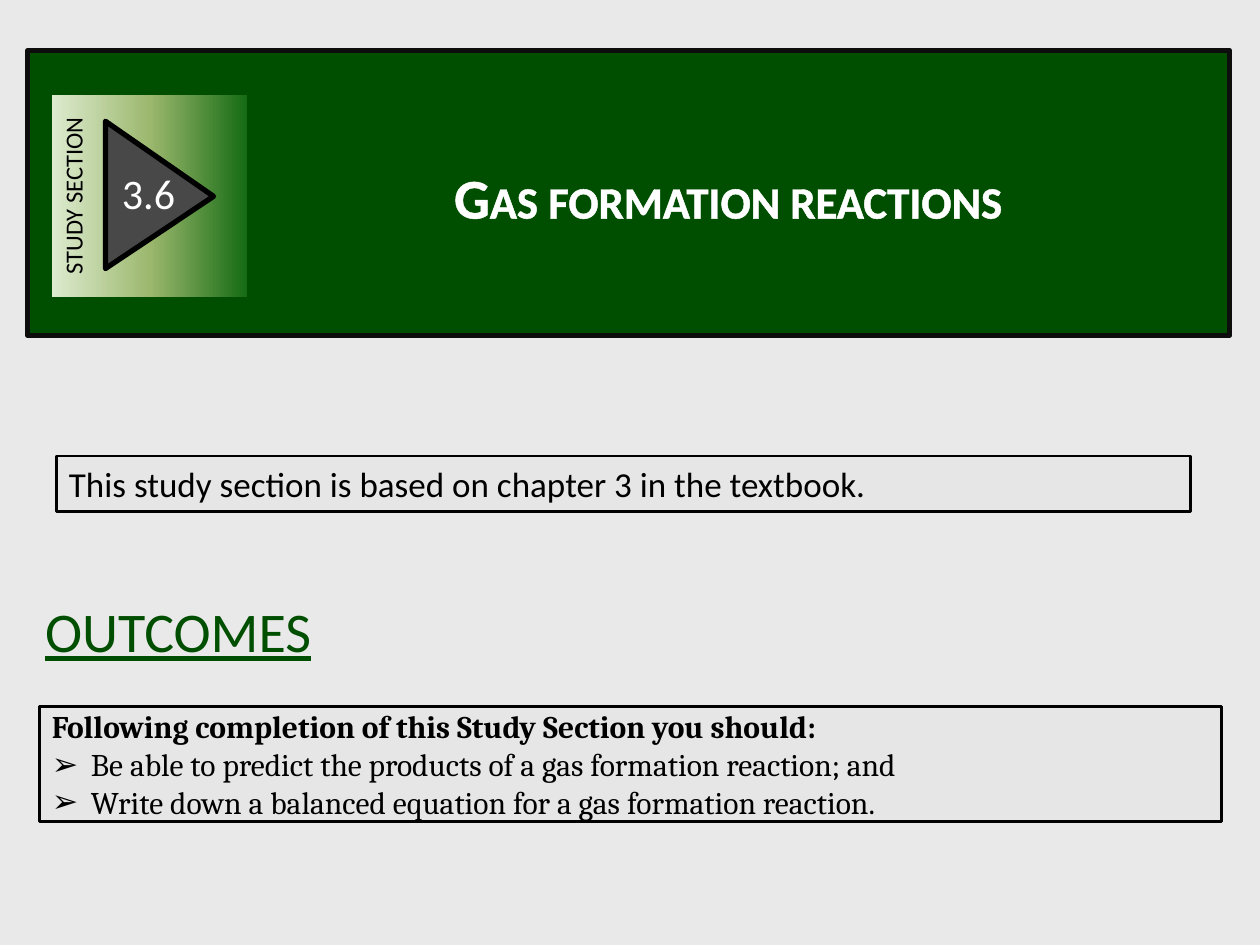
from lxml.etree import SubElement
from pptx import Presentation
from pptx.dml.color import RGBColor
from pptx.enum.shapes import MSO_SHAPE as Preset
from pptx.enum.text import MSO_ANCHOR as Anchor, MSO_AUTO_SIZE as AutoSize, PP_ALIGN as Align
from pptx.oxml import parse_xml
from pptx.oxml.ns import nsdecls, qn
from pptx.util import Cm, Pt

GREEN = "004E00"
BLACK = "000000"
WHITE = "FFFFFF"
PANEL = "E6E6E6"


def paint(fill, color):
    fill.solid()
    fill.fore_color.rgb = RGBColor.from_string(color)


def place(shape, left, top, width, height):
    shape.left, shape.top = Cm(left), Cm(top)
    shape.width, shape.height = Cm(width), Cm(height)


def style_box(shape, fill, line, weight):
    paint(shape.fill, fill)
    paint(shape.line.fill, line)
    shape.line.width = Pt(weight)


def add_box(shapes, preset, left, top, width, height):
    box = shapes.add_shape(preset, Cm(left), Cm(top), Cm(width), Cm(height))
    box.shadow.inherit = False
    return box


def add_label(shapes, left, top, width, height):
    return shapes.add_textbox(Cm(left), Cm(top), Cm(width), Cm(height))


def set_frame(shape, anchor=Anchor.TOP, wrap=True):
    frame = shape.text_frame
    frame.word_wrap = wrap
    frame.vertical_anchor = anchor
    frame.auto_size = AutoSize.SHAPE_TO_FIT_TEXT
    return frame


def add_span(para, text, size, color, font="Calibri", bold=False, align=Align.LEFT):
    para.alignment = align
    span = para.add_run()
    span.text = text
    span.font.name = font
    span.font.size = Pt(size)
    span.font.bold = bold
    paint(span.font.fill, color)
    return span


def outline_span(span, color, weight):
    line = parse_xml(
        f'<a:ln {nsdecls("a")} w="{Pt(weight)}"><a:solidFill>'
        f'<a:srgbClr val="{color}"/></a:solidFill></a:ln>'
    )
    span.font._element.insert(0, line)


def set_bullet(para, char=None, indent=0):
    props = para._p.get_or_add_pPr()
    props.set("marL", str(Cm(indent)))
    props.set("indent", str(-Cm(indent)))
    if char:
        SubElement(props, qn("a:buChar"), char=char)
    else:
        SubElement(props, qn("a:buNone"))


def fill_gradient(shape, stops):
    shape.fill.gradient()
    shape.fill.gradient_angle = 270
    stop_list = shape.element.spPr.find(qn("a:gradFill")).find(qn("a:gsLst"))
    for old_stop in list(stop_list):
        stop_list.remove(old_stop)
    for percent, color in stops:
        stop = SubElement(stop_list, qn("a:gs"), pos=str(percent * 1000))
        SubElement(stop, qn("a:srgbClr"), val=color)


def add_banner(page):
    banner = add_box(page.shapes, Preset.RECTANGLE, 0.56, 1.02, 24.23, 5.74)
    style_box(banner, GREEN, "0D0D0D", 3)
    title = page.shapes.title
    title.element.addprevious(banner.element)
    place(title, 5.36, 3.15, 18.64, 1.63)
    para = set_frame(title).paragraphs[0]
    span = add_span(para, "Gas formation reactions", 32, WHITE, bold=True, align=Align.CENTER)
    span.font._element.set("cap", "small")
    outline_span(span, WHITE, 0.75)


def add_badge(page):
    badge = page.shapes.add_group_shape().shapes
    tile = add_box(badge, Preset.RECTANGLE, 0.99, 1.98, 4.06, 3.94)
    tile.rotation = 270
    fill_gradient(tile, [(0, "DDEBCF"), (50, "9CB86E"), (100, "156B13")])
    tile.line.fill.background()
    add_span(set_frame(tile).paragraphs[0], "STUDY SECTION", 14, BLACK, align=Align.CENTER)

    arrow = add_box(badge, Preset.ISOSCELES_TRIANGLE, 1.73, 2.84, 2.97, 2.18)
    arrow.rotation = 90
    arrow.adjustments[0] = 0.51
    style_box(arrow, "484848", BLACK, 3)

    number = add_label(badge, 2.21, 3.25, 1.6, 1.27)
    add_span(set_frame(number, wrap=False).paragraphs[0], "3.6", 24, WHITE)


def add_heading(page):
    heading = add_label(page.shapes, 0.66, 11.91, 6.78, 1.63)
    span = add_span(set_frame(heading).paragraphs[0], "OUTCOMES", 32, GREEN)
    span.font.underline = True
    outline_span(span, BLACK, 0.25)


def add_outcomes(page):
    body = page.placeholders[1]
    place(body, 0.79, 14.12, 23.83, 2.57)
    style_box(body, PANEL, BLACK, 1.5)
    frame = set_frame(body, Anchor.MIDDLE)
    lines = [
        ("Following completion of this Study Section you should:", True, None, 0),
        ("Be able to predict the products of a gas formation reaction; and", False, "➢", 0.79),
        ("Write down a balanced equation for a gas formation reaction.", False, "➢", 0.79),
    ]
    for index, (text, bold, char, indent) in enumerate(lines):
        para = frame.add_paragraph() if index else frame.paragraphs[0]
        para.space_before = Pt(0)
        set_bullet(para, char, indent)
        add_span(para, text, 18, BLACK, "Cambria", bold)


def add_note(page):
    note = add_box(page.shapes, Preset.RECTANGLE, 1.14, 9.19, 22.86, 1.12)
    style_box(note, PANEL, BLACK, 1.5)
    para = set_frame(note, Anchor.MIDDLE).paragraphs[0]
    add_span(para, "This study section is based on chapter 3 in the textbook.", 20, BLACK)


def main():
    deck = Presentation()
    deck.slide_width, deck.slide_height = Cm(25.4), Cm(19.05)
    page = deck.slides.add_slide(deck.slide_layouts[1])
    paint(page.background.fill, "E9E9E9")
    add_banner(page)
    add_badge(page)
    add_heading(page)
    add_outcomes(page)
    add_note(page)
    deck.save("out.pptx")


if __name__ == "__main__":
    main()
